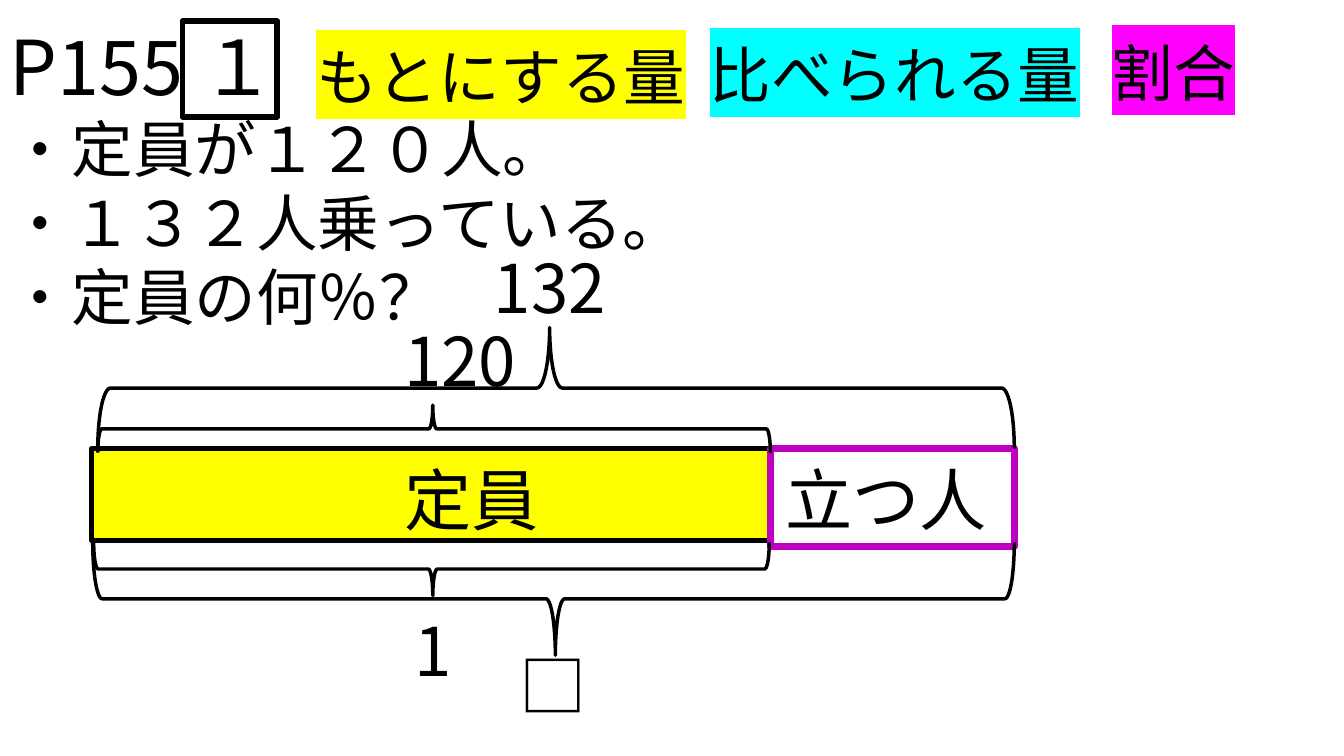
"""Build a slide that compares riders with capacity on a bar diagram."""
from dataclasses import dataclass

from lxml import etree
from pptx import Presentation
from pptx.dml.color import RGBColor
from pptx.enum.shapes import MSO_SHAPE
from pptx.enum.text import MSO_ANCHOR, PP_ALIGN
from pptx.oxml.ns import qn
from pptx.util import Inches, Pt

RECT, BRACE = MSO_SHAPE.RECTANGLE, MSO_SHAPE.LEFT_BRACE
TOP, LEFT = MSO_ANCHOR.TOP, PP_ALIGN.LEFT


@dataclass(frozen=True)
class Theme:
    """Colours, font and type sizes."""
    font: str = "Noto Sans CJK JP"
    black: str = "000000"
    white: str = "FFFFFF"
    yellow: str = "FFFF00"
    cyan: str = "00FFFF"
    magenta: str = "FF00FF"
    purple: str = "BC02C0"
    heading: int = 54
    body: int = 44
    label: int = 48
    leading: float = 1.2
    brace_line: float = 2.5


T = Theme()

PROBLEM = [
    ("P155 １", T.heading),
    ("・定員が１２０人。", T.body),
    ("・１３２人乗っている。", T.body),
    ("・定員の何％？", T.body),
]
KEYWORDS = [
    ("もとにする量", (3.04, 0.29, 4.49, 0.84), T.yellow, T.white),
    ("比べられる量", (6.94, 0.27, 4.33, 0.84), T.cyan, T.white),
    ("割合", (10.93, 0.25, 1.43, 0.84), T.magenta, None),
]
BOXES = [
    ((0.91, 4.45, 6.72, 0.91), T.yellow, T.black, 3.75),
    ((7.64, 4.45, 2.42, 0.97), None, T.purple, 4.75),
    ((1.81, 0.21, 0.94, 0.95), None, T.black, 4),
]
BRACES = [
    ((0.93, 5.38, 6.7, 0.53), 270, (0.083, 0.502)),
    ((0.92, 5.38, 9.14, 1.12), 270, (0.083, 0.502)),
    ((0.97, 3.25, 9.09, 1.2), 90, (0.105, 0.507)),
    ((0.97, 4.02, 6.67, 0.47), 90, (0.083, 0.502)),
]
LABELS = [
    ("□", (5.05, 6.29, 1.61, 0.91)),
    ("1", (4.01, 5.94, 0.79, 0.91)),
    ("定員", (3.91, 4.45, 2.07, 0.91)),
    ("120", (3.91, 3.07, 1.34, 0.91)),
    ("132", (4.8, 2.34, 1.61, 0.91)),
    ("立つ人", (7.69, 4.45, 2.42, 0.91)),
]


def rgb(color):
    return RGBColor.from_string(color)


def add_shape(s, kind, box, fill=None, line=None, width=1):
    sp = s.shapes.add_shape(kind, *map(Inches, box))
    sp.shadow.inherit = False
    if fill:
        sp.fill.solid()
        sp.fill.fore_color.rgb = rgb(fill)
    else:
        sp.fill.background()
    if line:
        sp.line.color.rgb = rgb(line)
        sp.line.width = Pt(width)
    else:
        sp.line.fill.background()
    return sp


def add_brace(s, box, turn, adjustments):
    left, top, span, depth = box
    frame = (left + (span - depth) / 2, top + (depth - span) / 2, depth, span)
    sp = add_shape(s, BRACE, frame, line=T.black, width=T.brace_line)
    sp.rotation = turn
    for i, value in enumerate(adjustments):
        sp.adjustments[i] = value


def add_run(p, text, size, highlight=None):
    r = p.add_run()
    r.text = text
    r.font.size = Pt(size)
    r.font.color.rgb = rgb(T.black)
    rPr = r.font._element
    if highlight:
        mark = etree.SubElement(rPr, qn("a:highlight"))
        etree.SubElement(mark, qn("a:srgbClr"), val=highlight)
    for tag in ("a:latin", "a:ea"):
        etree.SubElement(rPr, qn(tag), typeface=T.font)


def write(sp, lines, highlight=None):
    tf = sp.text_frame
    tf.word_wrap = True
    tf.vertical_anchor = TOP
    tf.margin_top = Inches(0.1)
    tf.margin_bottom = 0
    for i, (text, size) in enumerate(lines):
        p = tf.add_paragraph() if i else tf.paragraphs[0]
        p.alignment = LEFT
        p.line_spacing = Pt(size * T.leading)
        add_run(p, text, size, highlight)


def add_text(s, box, lines, highlight=None):
    write(s.shapes.add_textbox(*map(Inches, box)), lines, highlight)


def main():
    prs = Presentation()
    prs.slide_width, prs.slide_height = Inches(13.33), Inches(7.5)
    s = prs.slides.add_slide(prs.slide_layouts[6])
    add_text(s, (0, 0.1, 13.33, 3.23), PROBLEM)
    for text, box, highlight, fill in KEYWORDS:
        if fill:
            write(add_shape(s, RECT, box, fill), [(text, T.body)], highlight)
        else:
            add_text(s, box, [(text, T.body)], highlight)
    for box in BOXES:
        add_shape(s, RECT, *box)
    for brace in BRACES:
        add_brace(s, *brace)
    for text, box in LABELS:
        add_text(s, box, [(text, T.label)])
    prs.save("out.pptx")


if __name__ == "__main__":
    main()
